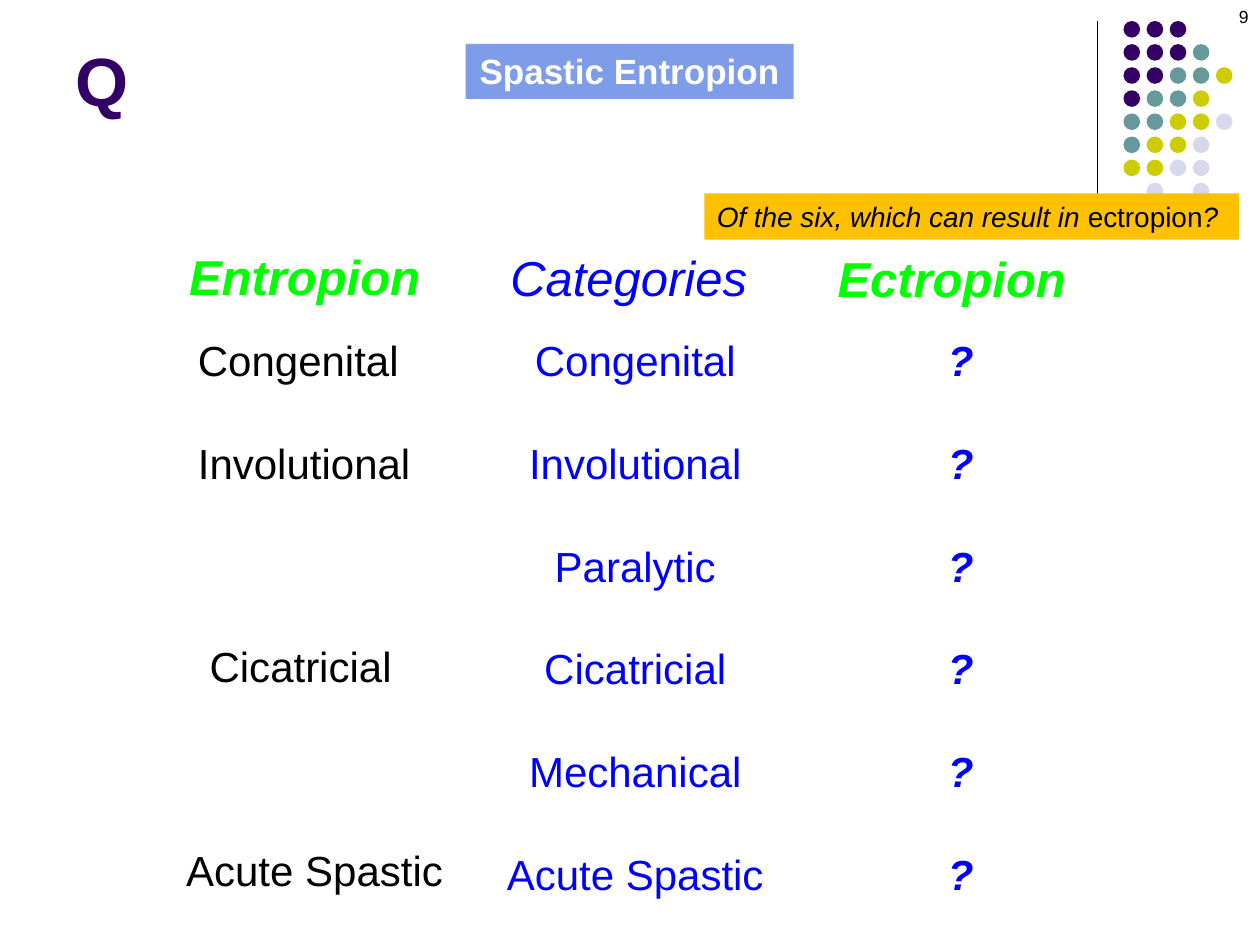
from dataclasses import dataclass

import pptx
import pptx.dml.color
import pptx.enum.shapes
import pptx.enum.text
import pptx.oxml
import pptx.oxml.ns
import pptx.util

Pt = pptx.util.Pt
Align = pptx.enum.text.PP_ALIGN
Anchor = pptx.enum.text.MSO_ANCHOR


@dataclass(frozen=True)
class Theme:
    font: str = "Arial"
    purple: str = "330066"
    teal: str = "669999"
    olive: str = "CCCC00"
    lilac: str = "D8D8EC"
    blue: str = "0000FF"
    green: str = "00FF00"
    black: str = "000000"
    white: str = "FFFFFF"
    banner: str = "7E9CE8"
    gold: str = "FFC000"
    title_size: float = 39
    heading_size: float = 28
    body_size: float = 24
    banner_size: float = 20
    question_size: float = 16
    number_size: float = 10


@dataclass(frozen=True)
class Box:
    left: float
    top: float
    width: float
    height: float

    def lengths(self) -> tuple:
        return Pt(self.left), Pt(self.top), Pt(self.width), Pt(self.height)


@dataclass(frozen=True)
class Style:
    size: float
    color: str
    bold: bool = False
    italic: bool = False


@dataclass(frozen=True)
class Heading:
    text: str
    box: Box
    style: Style


@dataclass(frozen=True)
class Entry:
    text: str
    row: int
    indent: float = 0


THEME = Theme()
ROW_PITCH = 57.6
LINE_HEIGHT = 27.6
CATEGORIES = ("Congenital", "Involutional", "Paralytic",
              "Cicatricial", "Mechanical", "Acute Spastic")
DOT_ROWS = ("PPP", "PPPT", "PPTTO", "PTTO", "TTOOL", "TOOL", "OOLL", " L L")
DOT_COLORS = {"P": THEME.purple, "T": THEME.teal, "O": THEME.olive, "L": THEME.lilac}


def rgb(color: str) -> pptx.dml.color.RGBColor:
    return pptx.dml.color.RGBColor.from_string(color)


def format_runs(paragraph, style: Style, alignment=Align.LEFT) -> None:
    paragraph.alignment = alignment
    for run in paragraph.runs:
        run.font.name = THEME.font
        run.font.size = Pt(style.size)
        run.font.bold = style.bold
        run.font.italic = style.italic
        run.font.color.rgb = rgb(style.color)


def add_text(slide, box: Box, text: str, style: Style,
             alignment=Align.LEFT, wrap: bool = False):
    shape = slide.shapes.add_textbox(*box.lengths())
    shape.text_frame.word_wrap = wrap
    shape.text_frame.text = text
    format_runs(shape.text_frame.paragraphs[0], style, alignment)
    return shape


def add_filled_shape(slide, kind, box: Box, color: str):
    shape = slide.shapes.add_shape(kind, *box.lengths())
    shape.shadow.inherit = False
    shape.fill.solid()
    shape.fill.fore_color.rgb = rgb(color)
    shape.line.fill.background()
    return shape


def add_label(slide, box: Box, color: str, parts: tuple, style: Style, alignment):
    """Filled rectangle whose single paragraph is made of the given runs."""
    shape = add_filled_shape(slide, pptx.enum.shapes.MSO_SHAPE.RECTANGLE, box, color)
    shape.text_frame.word_wrap = False
    shape.text_frame.vertical_anchor = Anchor.TOP
    paragraph = shape.text_frame.paragraphs[0]
    for part in parts:
        paragraph.add_run().text = part
    format_runs(paragraph, style, alignment)
    return shape


def add_column(slide, box: Box, entries: list, style: Style, alignment) -> None:
    """Column of entries placed on the common row pitch by paragraph spacing."""
    frame = slide.shapes.add_textbox(*box.lengths()).text_frame
    frame.word_wrap = True
    previous_row = 0
    for index, entry in enumerate(entries):
        paragraph = frame.add_paragraph() if index else frame.paragraphs[0]
        paragraph.text = entry.text
        format_runs(paragraph, style, alignment)
        if index:
            paragraph.space_before = Pt((entry.row - previous_row) * ROW_PITCH - LINE_HEIGHT)
        if entry.indent:
            paragraph._p.get_or_add_pPr().set("marL", str(Pt(entry.indent)))
        previous_row = entry.row


def add_decoration(slide) -> None:
    line = slide.shapes.add_connector(pptx.enum.shapes.MSO_CONNECTOR.STRAIGHT,
                                      Pt(627), Pt(12), Pt(627), Pt(132))
    line.line.color.rgb = rgb(THEME.black)
    line.line.width = Pt(0.75)
    line._element.spPr.append(pptx.oxml.parse_xml(
        "<a:effectLst %s/>" % pptx.oxml.ns.nsdecls("a")))
    for row, pattern in enumerate(DOT_ROWS):
        for column, key in enumerate(pattern):
            if key in DOT_COLORS:
                dot = Box(642 + column * 13.2, 12 + row * 13.2, 9.5, 9.5)
                add_filled_shape(slide, pptx.enum.shapes.MSO_SHAPE.OVAL, dot, DOT_COLORS[key])


def add_title(slide) -> None:
    title = slide.shapes.title
    title.left, title.top, title.width, title.height = Box(36, 9, 594, 63).lengths()
    title.text_frame.text = "Q"
    title.text_frame.vertical_anchor = Anchor.BOTTOM
    format_runs(title.text_frame.paragraphs[0],
                Style(THEME.title_size, THEME.purple, bold=True))


def main() -> None:
    presentation = pptx.Presentation()
    presentation.slide_width, presentation.slide_height = Pt(720), Pt(540)
    slide = presentation.slides.add_slide(presentation.slide_layouts[5])

    # Title, corner decoration and slide number
    add_title(slide)
    add_decoration(slide)
    add_text(slide, Box(553, 0, 167.5, 36), "9",
             Style(THEME.number_size, THEME.black), Align.RIGHT, wrap=True)

    # Column headings
    answer = Style(THEME.heading_size, THEME.green, bold=True, italic=True)
    topic = Style(THEME.heading_size, THEME.blue, italic=True)
    for heading in (Heading("Entropion", Box(101, 137.5, 147.5, 41.5), answer),
                    Heading("Categories", Box(284.5, 138, 151, 41.5), topic),
                    Heading("Ectropion", Box(471.5, 138.5, 146, 41.5), answer)):
        add_text(slide, heading.box, heading.text, heading.style)

    # Columns: known entropion causes, all categories, open ectropion answers
    entropion = [Entry("Congenital", 0, 40), Entry("Involutional", 1, 40),
                 Entry("Cicatricial", 3, 46.7), Entry("Acute Spastic", 5, 33.3)]
    categories = [Entry(name, row) for row, name in enumerate(CATEGORIES)]
    unknowns = [Entry("?", row) for row in range(len(CATEGORIES))]
    size = THEME.body_size
    add_column(slide, Box(66, 187.5, 594, 327), entropion,
               Style(size, THEME.black), Align.LEFT)
    add_column(slide, Box(264, 187.5, 198, 327), categories,
               Style(size, THEME.blue), Align.CENTER)
    add_column(slide, Box(450, 187.5, 198, 327), unknowns,
               Style(size, THEME.blue, bold=True, italic=True), Align.CENTER)

    # Question and topic labels
    question = add_label(slide, Box(402.5, 110.5, 305.5, 26.5), THEME.gold,
                         ("Of the six, which can result in ", "ectropion", "?"),
                         Style(THEME.question_size, THEME.black, italic=True), Align.LEFT)
    question.text_frame.paragraphs[0].runs[1].font.italic = False
    add_label(slide, Box(266, 25, 187.5, 31.5), THEME.banner, ("Spastic Entropion",),
              Style(THEME.banner_size, THEME.white, bold=True), Align.CENTER)

    presentation.save("out.pptx")


if __name__ == "__main__":
    main()
